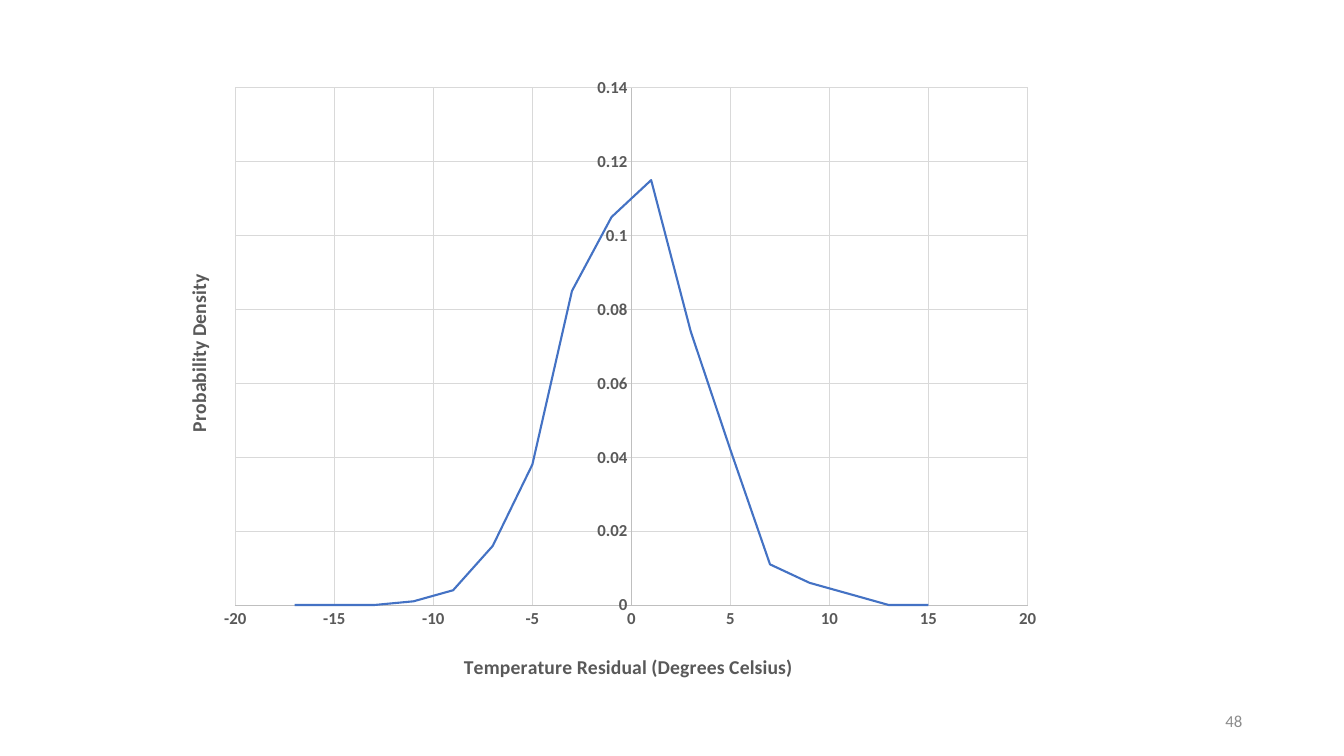
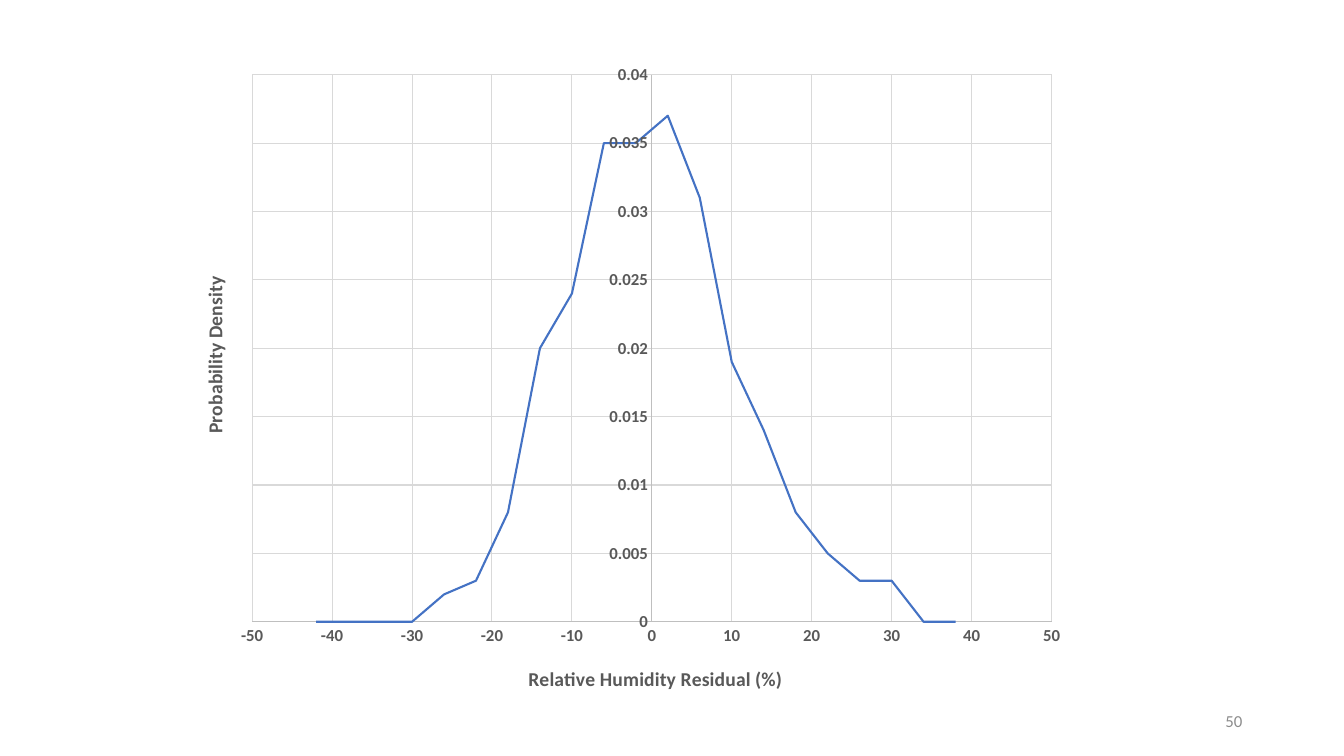
from dataclasses import dataclass
from typing import NamedTuple

from lxml import etree
from pptx import Presentation
from pptx import util as u
from pptx.chart import axis as ax
from pptx.chart import data as cd
from pptx.dml.color import RGBColor
from pptx.enum import chart as ce
from pptx.enum import text
from pptx.oxml import ns
from pptx.slide import Slide


@dataclass(frozen=True)
class Theme:
    font: str = "Calibri"
    curve: RGBColor = RGBColor(0x44, 0x72, 0xC4)
    label: RGBColor = RGBColor(0x59, 0x59, 0x59)
    axis: RGBColor = RGBColor(0xBF, 0xBF, 0xBF)
    grid: RGBColor = RGBColor(0xD9, 0xD9, 0xD9)
    page: RGBColor = RGBColor(0x8C, 0x8C, 0x8C)
    base_size: int = 10
    label_size: int = 12
    title_size: int = 14
    curve_width: float = 1.5
    rule_width: float = 0.75


class Box(NamedTuple):
    """Position and size, in inches."""
    left: float
    top: float
    width: float
    height: float


class Axis(NamedTuple):
    """Title, its left and top as shares of the chart, and the scale."""
    title: str
    left: float
    top: float
    low: float
    high: float
    step: float
    upright: bool = False


@dataclass(frozen=True)
class Density:
    page: int
    box: Box
    plot: Box  # shares of the chart
    residual: Axis
    density: Axis
    first: int
    bin_width: int
    thousandths: tuple[int, ...]


THEME = Theme()
SLIDE = (13.33, 7.5)
PAGE_BOX = Box(9.42, 6.95, 3, 0.4)
DENSITIES = (
    Density(
        48, Box(1.53, 0.62, 8.93, 6.26), Box(0.09, 0.04, 0.88, 0.82),
        Axis("Temperature Residual (Degrees Celsius)", 0.34, 0.93, -20, 20, 5),
        Axis("Probability Density", 0.03, 0.33, 0, 0.14, 0.02, True),
        -17, 2,
        (0, 0, 0, 1, 4, 16, 38, 85, 105, 115, 74, 42, 11, 6, 3, 0, 0),
    ),
    Density(
        50, Box(1.69, 0.48, 9.01, 6.54), Box(0.09, 0.04, 0.88, 0.83),
        Axis("Relative Humidity Residual (%)", 0.39, 0.93, -50, 50, 10),
        Axis("Probability Density", 0.03, 0.34, 0, 0.04, 0.005, True),
        -42, 4,
        (0, 0, 0, 0, 2, 3, 8, 20, 24, 35, 35, 37, 31, 19, 14, 8, 5, 3, 3, 0, 0),
    ),
)


def style_font(font, size: int, color: RGBColor, bold: bool = False) -> None:
    font.name, font.size, font.bold = THEME.font, u.Pt(size), bold
    font.color.rgb = color


def style_line(line, color: RGBColor, width: float) -> None:
    line.color.rgb, line.width = color, u.Pt(width)


def set_layout(parent: etree._Element, index: int, **shares: float | str) -> None:
    """Fix a chart part by hand; index is where its layout belongs."""
    layout = parent.find(ns.qn("c:layout"))
    if layout is None:
        layout = etree.Element(ns.qn("c:layout"))
        parent.insert(index, layout)
    manual = etree.SubElement(layout, ns.qn("c:manualLayout"))
    for tag, value in shares.items():
        etree.SubElement(manual, ns.qn(f"c:{tag}")).set("val", str(value))


def style_axis(target: ax.ValueAxis, spec: Axis) -> None:
    target.minimum_scale, target.maximum_scale = spec.low, spec.high
    target.major_unit = spec.step
    target.major_tick_mark = target.minor_tick_mark = ce.XL_TICK_MARK.NONE
    target.has_major_gridlines = True
    style_line(target.major_gridlines.format.line, THEME.grid, THEME.rule_width)
    style_line(target.format.line, THEME.axis, THEME.rule_width)
    style_font(target.tick_labels.font, THEME.label_size, THEME.label, True)
    target.tick_labels.number_format = "General"
    target.tick_labels.number_format_is_linked = False

    title = target.axis_title
    title.text_frame.text = spec.title
    run = title.text_frame.paragraphs[0].runs[0]
    style_font(run.font, THEME.title_size, THEME.label, True)
    if spec.upright:
        body = title.element.find(".//" + ns.qn("a:bodyPr"))
        body.set("rot", "-5400000")
        body.set("vert", "horz")
    set_layout(title.element, 1, xMode="edge", yMode="edge", x=spec.left, y=spec.top)


def add_density_chart(slide: Slide, spec: Density) -> None:
    data = cd.XyChartData()
    points = data.add_series("Series 1")
    for i, value in enumerate(spec.thousandths):
        points.add_data_point(spec.first + i * spec.bin_width, value / 1000)
    chart = slide.shapes.add_chart(
        ce.XL_CHART_TYPE.XY_SCATTER_LINES_NO_MARKERS, *map(u.Inches, spec.box), data
    ).chart
    chart.has_legend = chart.has_title = False
    chart.font.name, chart.font.size = THEME.font, u.Pt(THEME.base_size)
    chart.plots[0].vary_by_categories = False
    curve = chart.plots[0].series[0]
    curve.smooth = False
    style_line(curve.format.line, THEME.curve, THEME.curve_width)
    style_axis(chart.category_axis, spec.residual)
    style_axis(chart.value_axis, spec.density)
    plot = spec.plot
    set_layout(
        chart.element.find(".//" + ns.qn("c:plotArea")), 0,
        layoutTarget="inner", xMode="edge", yMode="edge",
        x=plot.left, y=plot.top, w=plot.width, h=plot.height,
    )


def add_page_number(slide: Slide, number: int) -> None:
    frame = slide.shapes.add_textbox(*map(u.Inches, PAGE_BOX)).text_frame
    frame.word_wrap = True
    frame.vertical_anchor = text.MSO_ANCHOR.MIDDLE
    frame.text = str(number)
    line = frame.paragraphs[0]
    line.alignment = text.PP_ALIGN.RIGHT
    style_font(line.runs[0].font, THEME.label_size, THEME.page)


def main() -> None:
    deck = Presentation()
    deck.slide_width, deck.slide_height = map(u.Inches, SLIDE)
    for spec in DENSITIES:
        slide = deck.slides.add_slide(deck.slide_layouts[6])
        add_page_number(slide, spec.page)
        add_density_chart(slide, spec)
    deck.save("out.pptx")


if __name__ == "__main__":
    main()
